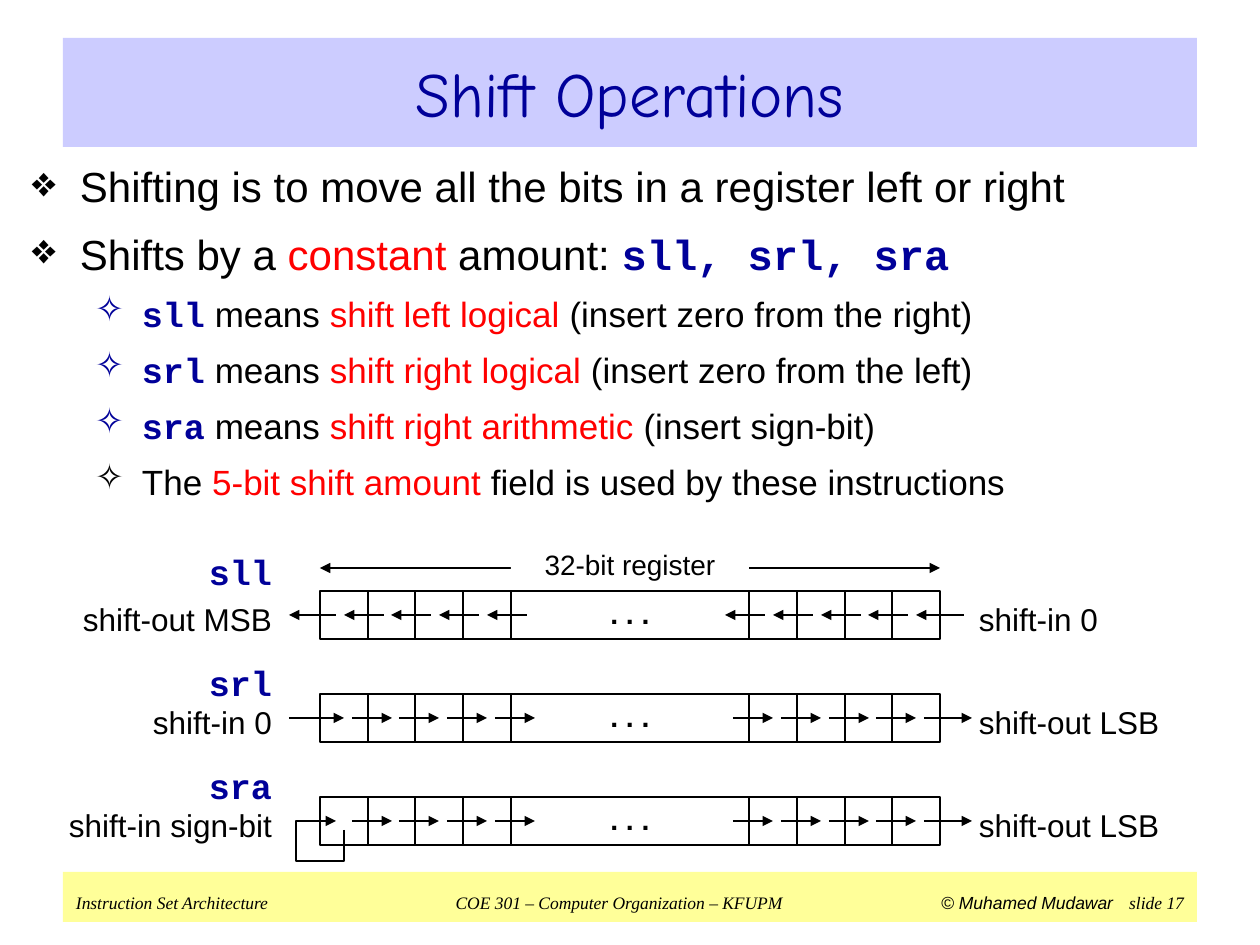
from dataclasses import dataclass
from typing import Optional

from lxml import etree
from pptx import Presentation
from pptx.dml.color import RGBColor
from pptx.enum.shapes import MSO_CONNECTOR, MSO_SHAPE
from pptx.enum.text import MSO_ANCHOR, PP_ALIGN
from pptx.oxml.ns import qn
from pptx.util import Emu, Pt

RECT, STRAIGHT = MSO_SHAPE.RECTANGLE, MSO_CONNECTOR.STRAIGHT
TOP, MIDDLE = MSO_ANCHOR.TOP, MSO_ANCHOR.MIDDLE
LEFT, CENTER, RIGHT = PP_ALIGN.LEFT, PP_ALIGN.CENTER, PP_ALIGN.RIGHT
EMU_PER_PX = 914400 / 126
BLACK, NAVY, RED, WHITE = "000000", "000099", "FF0000", "FFFFFF"
SANS, MONO, SERIF = "Arial", "Courier New", "Times New Roman"
CELL = 48
UNITS, EDGES = 13, (0, 1, 2, 3, 4, 9, 10, 11, 12, 13)
REG_X, REG_W = 320, 620
LABEL_RIGHT = 272


@dataclass
class Run:
    text: str
    size: int
    font: str = SANS
    color: str = BLACK
    bold: bool = False
    italic: bool = False
    baseline: int = 0


@dataclass
class Register:
    name: str
    left_label: str
    right_label: str
    top: int
    name_rise: int
    label_x: int
    right_w: int
    shifts_left: bool = False
    first_arrow: bool = True


REGISTERS = [
    Register("sll", "shift-out MSB", "shift-in 0", 591, 39, 74, 135, shifts_left=True),
    Register("srl", "shift-in 0", "shift-out LSB", 694, 31, 122, 207),
    Register("sra", "shift-in sign-bit", "shift-out LSB", 797, 31, 58, 207, first_arrow=False),
]


def px(n: int) -> Emu:
    return Emu(round(n * EMU_PER_PX))


def rgb(color: str) -> RGBColor:
    return RGBColor.from_string(color)


def add_runs(p, runs: list[Run]) -> None:
    for run in runs:
        r = p.add_run()
        r.text = run.text
        fmt = {"size": Pt(run.size), "name": run.font, "bold": run.bold, "italic": run.italic}
        for key, value in fmt.items():
            setattr(r.font, key, value)
        r.font.color.rgb = rgb(run.color)
        if run.baseline:
            r.font._element.set("baseline", str(run.baseline * 1000))


def space_before(p, percent: int) -> None:
    spacing = etree.SubElement(p._p.get_or_add_pPr(), qn("a:spcBef"))
    etree.SubElement(spacing, qn("a:spcPct"), val=str(percent * 1000))


def set_frame(shape, anchor, side: int = 13):
    tf = shape.text_frame
    fmt = {"word_wrap": True, "vertical_anchor": anchor, "margin_left": px(side),
           "margin_right": px(side), "margin_top": px(6), "margin_bottom": px(6)}
    for key, value in fmt.items():
        setattr(tf, key, value)
    return tf


def add_text(shape, runs: list[Run], align, side: int = 0, line_spacing: Optional[float] = None,
             before: int = 0) -> None:
    p = set_frame(shape, MIDDLE, side).paragraphs[0]
    p.alignment = align
    if line_spacing:
        p.line_spacing = line_spacing
    if before:
        space_before(p, before)
    add_runs(p, runs)


def outline(shape) -> None:
    shape.line.color.rgb = rgb(BLACK)
    shape.line.width = Pt(0.75)


def add_box(shapes, x: int, y: int, w: int, h: int, fill: Optional[str] = None):
    sp = shapes.add_shape(RECT, px(x), px(y), px(w), px(h))
    sp.shadow.inherit = False
    if fill:
        sp.fill.solid()
        sp.fill.fore_color.rgb = rgb(fill)
        sp.line.fill.background()
    else:
        sp.fill.background()
        outline(sp)
    return sp


def add_label(shapes, x: int, y: int, w: int, h: int, run: Run, align, **spacing) -> None:
    add_text(shapes.add_textbox(px(x), px(y), px(w), px(h)), [run], align, **spacing)


def arrowheads(shape, *ends: str) -> None:
    for end in ends:
        etree.SubElement(shape.line._get_or_add_ln(), qn(f"a:{end}"), type="triangle")


def add_arrow(shapes, x1: int, x2: int, y: int, *ends: str) -> None:
    c = shapes.add_connector(STRAIGHT, px(x1), px(y), px(x2), px(y))
    outline(c)
    arrowheads(c, *ends)
    etree.SubElement(c._element.spPr, qn("a:effectLst"))


def draw_register(shapes, reg: Register) -> None:
    edges = [REG_X + round(REG_W * unit / UNITS) for unit in EDGES]
    middle = reg.top + CELL // 2
    for left, right in zip(edges, edges[1:]):
        cell = add_box(shapes, left, reg.top, right - left, CELL)
        if right - left > 2 * CELL:
            add_text(cell, [Run(". . .", 28, bold=True, baseline=20)], CENTER, before=50)
    back, ahead = (24, 16) if reg.shifts_left else (16, 24)
    for i, edge in enumerate(edges):
        if i == 0 and not reg.first_arrow:
            continue
        start = edge - (31 if i == 0 else back)
        stop = edge + (ahead + 8 if i == len(edges) - 1 else ahead)
        add_arrow(shapes, start, stop, middle, "headEnd" if reg.shifts_left else "tailEnd")
    add_label(shapes, reg.label_x, reg.top, LABEL_RIGHT - reg.label_x, CELL,
              Run(reg.left_label, 18), RIGHT, line_spacing=1.2)
    add_label(shapes, 979, reg.top, reg.right_w, CELL, Run(reg.right_label, 18), LEFT, line_spacing=1.2)
    add_label(shapes, LABEL_RIGHT - 95, reg.top - reg.name_rise, 95, 39,
              Run(reg.name, 20, MONO, NAVY, bold=True), RIGHT, before=50)


def draw_width_marker(shapes) -> None:
    add_arrow(shapes, REG_X, REG_X + REG_W, 568, "headEnd", "tailEnd")
    add_text(add_box(shapes, 511, 544, 238, 40, WHITE), [Run("32-bit register", 16)], CENTER, before=50)


def draw_sign_loop(shapes, top: int) -> None:
    middle, bottom = top + 24, top + 64
    fb = shapes.build_freeform(344, middle + 9, scale=EMU_PER_PX)
    fb.add_line_segments([(344, bottom), (296, bottom), (296, middle), (336, middle)], close=False)
    sp = fb.convert_to_shape()
    sp.shadow.inherit = False
    sp.fill.background()
    outline(sp)
    arrowheads(sp, "tailEnd")


def draw_footer(shapes) -> None:
    p = set_frame(add_box(shapes, 63, 872, 1134, 50, "FFFF99"), TOP).paragraphs[0]
    p.alignment = LEFT
    space_before(p, 50)
    tabs = etree.SubElement(p._p.get_or_add_pPr(), qn("a:tabLst"))
    for pos, align in ((543, "ctr"), (1037, "r"), (1109, "r")):
        etree.SubElement(tabs, qn("a:tab"), pos=str(px(pos)), algn=align)
    add_runs(p, [
        Run("Instruction Set Architecture\tCOE 301 – Computer Organization – KFUPM\t", 10, SERIF, italic=True),
        Run("© Muhamed Mudawar", 10, italic=True),
        Run("\t", 18),
        Run("slide 17", 10, SERIF, italic=True),
    ])


def add_bullet(p, level: int, runs: list[Run]) -> None:
    margin, hang, mark = ((48, 48, "❖"), (110, 47, "✧"))[level]
    p.level = level
    p.alignment = LEFT
    space_before(p, 40)
    pPr = p._p.get_or_add_pPr()
    pPr.set("marL", str(px(margin)))
    pPr.set("indent", str(-px(hang)))
    etree.SubElement(pPr, qn("a:buChar"), char=mark)
    add_runs(p, runs)


def draw_body(shapes) -> None:
    bullets = [
        (0, [Run("Shifting is to move all the bits in a register left or right", 24)]),
        (0, [Run("Shifts by a ", 24), Run("constant", 24, color=RED), Run(" amount: ", 24),
             Run("sll, srl, sra", 24, MONO, NAVY, bold=True)]),
    ]
    for name, meaning, detail in (("sll", "shift left logical", "insert zero from the right"),
                                  ("srl", "shift right logical", "insert zero from the left"),
                                  ("sra", "shift right arithmetic", "insert sign-bit")):
        bullets.append((1, [Run(name, 20, MONO, NAVY, bold=True), Run(" means ", 20),
                            Run(meaning, 20, color=RED), Run(f" ({detail})", 20)]))
    bullets.append((1, [Run("The ", 20), Run("5-bit shift amount", 20, color=RED),
                        Run(" field is used by these instructions", 20)]))
    tf = set_frame(shapes.add_textbox(px(19), px(155), px(1222), px(378)), TOP)
    for i, (level, runs) in enumerate(bullets):
        add_bullet(tf.add_paragraph() if i else tf.paragraphs[0], level, runs)


def main() -> None:
    prs = Presentation()
    prs.slide_width, prs.slide_height = px(1260), px(945)
    s = prs.slides.add_slide(prs.slide_layouts[6])
    draw_footer(s.shapes)
    add_text(add_box(s.shapes, 63, 38, 1134, 109, "CCCCFF"),
             [Run("Shift Operations", 36, "Comic Neue", NAVY)], CENTER, side=13)
    draw_body(s.shapes)
    for reg in REGISTERS:
        group = s.shapes.add_group_shape().shapes
        draw_register(group, reg)
        if reg.shifts_left:
            draw_width_marker(group)
        if not reg.first_arrow:
            draw_sign_loop(group, reg.top)
    prs.save("out.pptx")


if __name__ == "__main__":
    main()
